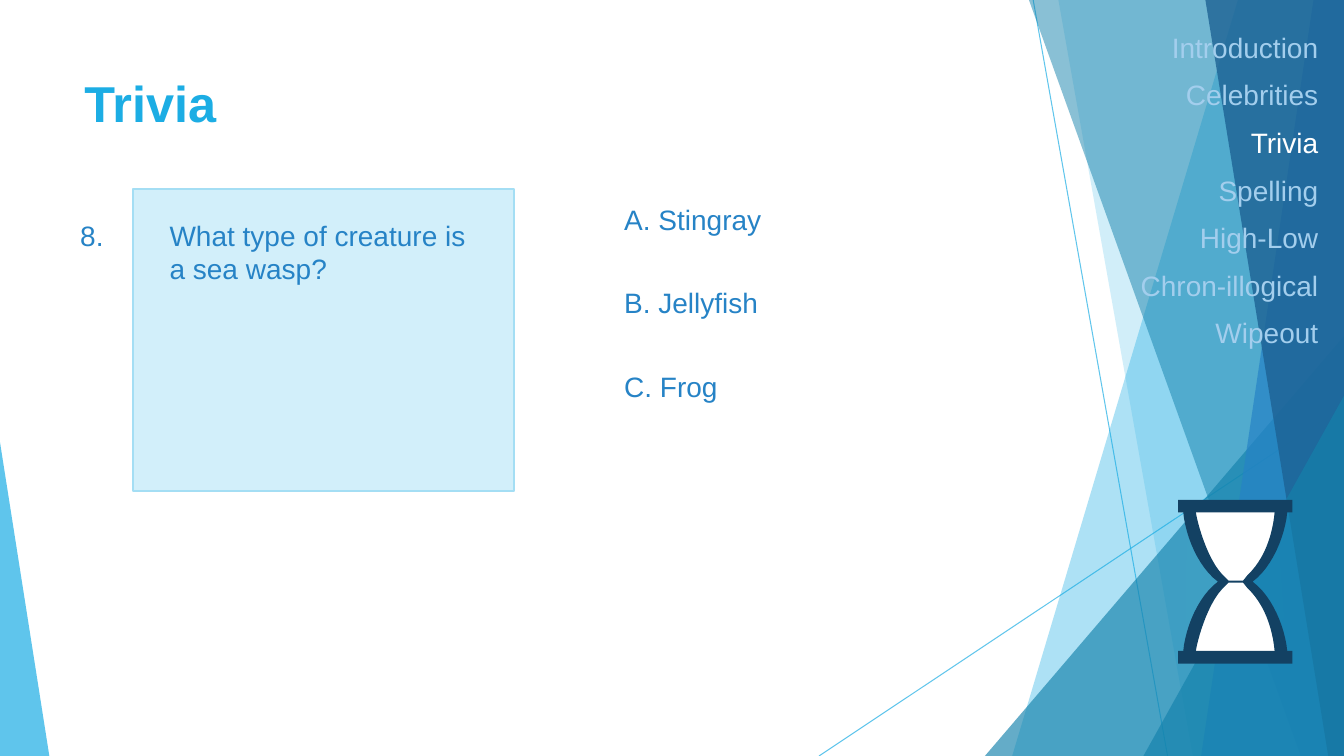
from dataclasses import dataclass

from lxml import etree
from pptx import Presentation
from pptx import util as u
from pptx.dml.color import RGBColor
from pptx.enum import shapes, text
from pptx.oxml import ns

PX = 9525  # EMU in one px
WIDTH, HEIGHT = 1280, 720
CURVE_STEPS = 12


@dataclass(frozen=True)
class Theme:
    font: str = "Arial"
    title_size: int = 36
    body_size: int = 20
    sky: str = "1CADE4"
    teal: str = "1482AC"
    blue: str = "2683C6"
    deep: str = "1D6294"
    navy: str = "134163"
    card: str = "D2EFFA"
    card_edge: str = "A4DEF4"
    muted: str = "A3CEED"
    white: str = "FFFFFF"
    waist_left: str = "3E9FC3"
    waist_right: str = "1A84B3"


THEME = Theme()


@dataclass(frozen=True)
class Ray:
    start: tuple[int, int]
    end: tuple[int, int]


@dataclass(frozen=True)
class Band:
    """A full-height facet between a slanted left edge and the slide's right edge."""
    top_x: int
    bottom_x: int
    color: str
    opacity: int


@dataclass(frozen=True)
class Wedge:
    """A right triangle standing on the slide's bottom edge."""
    left: int
    top: int
    width: int
    apex: float
    color: str
    opacity: int


@dataclass(frozen=True)
class Label:
    words: str
    left: int
    top: int
    width: int
    height: int = 42
    wrap: bool = True


RAYS = [Ray((984, 0), (1112, 720)), Ray((1280, 387), (780, 720))]
FACETS = [
    Band(1179, 964, THEME.sky, 36),
    Band(1008, 1136, THEME.sky, 20),
    Wedge(938, 320, 342, 1, THEME.teal, 66),
    Band(980, 1239, THEME.teal, 50),
    Band(1251, 1144, THEME.blue, 70),
    Band(1148, 1265, THEME.deep, 80),
    Wedge(1089, 377, 191, 1, THEME.teal, 66),
    Wedge(0, 421, 47, 0, THEME.sky, 70),
]
LABELS = [
    Label("What type of creature is a sea wasp?", 152, 203, 317, 74),
    Label("8.", 67, 203, 43, wrap=False),
    Label("A. Stingray", 585, 188, 321),
    Label("B. Jellyfish", 585, 267, 293),
    Label("C. Frog", 585, 347, 327),
]
ROUNDS = ["Introduction", "Celebrities", "Trivia", "Spelling", "High-Low",
          "Chron-illogical", "Wipeout"]
CURRENT_ROUND = "Trivia"

# Upper half of the hourglass: two numbers are a corner, six are a Bézier curve.
WAIST_Y = 554
FRAME_TOP = [(1160, 554), (1141, 540, 1129, 510, 1127, 488), (1122, 488), (1122, 476),
             (1231, 476), (1231, 488), (1226, 488), (1224, 510, 1212, 540, 1193, 554)]
BULB_TOP = [(1139, 488), (1140, 496, 1149, 531, 1164, 547), (1170, 553), (1184, 553),
            (1188, 548), (1204, 533, 1212, 510, 1214, 488)]
WAIST_LEFT = [(1134, 513), (1130, 518), (1129, 593), (1138, 593), (1165, 553)]
WAIST_RIGHT = [(1219, 594), (1223, 588), (1219, 529), (1215, 515), (1188, 554)]

Points = list[tuple[float, float]]


def rgb(color: str) -> RGBColor:
    return RGBColor.from_string(color)


def set_opacity(fill_parent, percent: int) -> None:
    color = fill_parent.find(".//" + ns.qn("a:srgbClr"))
    etree.SubElement(color, ns.qn("a:alpha")).set("val", str(percent * 1000))


def paint(shape, color: str, opacity: int = 100) -> None:
    shape.shadow.inherit = False
    shape.fill.solid()
    shape.fill.fore_color.rgb = rgb(color)
    shape.line.fill.background()
    if opacity < 100:
        set_opacity(shape._element.spPr, opacity)


def flatten(steps: list[tuple[int, ...]]) -> Points:
    """Turn corners and Bézier curves into a run of points."""
    points: Points = []
    for step in steps:
        if len(step) == 2:
            points.append(step)
            continue
        (x0, y0), (x1, y1, x2, y2, x3, y3) = points[-1], step
        for i in range(1, CURVE_STEPS + 1):
            t = i / CURVE_STEPS
            a, b, c, d = (1 - t) ** 3, 3 * t * (1 - t) ** 2, 3 * t * t * (1 - t), t ** 3
            points.append((a * x0 + b * x1 + c * x2 + d * x3,
                           a * y0 + b * y1 + c * y2 + d * y3))
    return points


def mirror(points: Points) -> Points:
    """Reflect points below the waist, in reverse order."""
    return [(x, 2 * WAIST_Y - y) for x, y in reversed(points)]


def add_outline(slide, contours: list[Points], color: str, opacity: int = 100) -> None:
    scaled = [[(x * PX, y * PX) for x, y in contour] for contour in contours]
    builder = slide.shapes.build_freeform(*scaled[0][0])
    for index, contour in enumerate(scaled):
        if index:
            builder.move_to(*contour[0])
        builder.add_line_segments(contour[1:], close=True)
    paint(builder.convert_to_shape(), color, opacity)


def add_preset(slide, kind, left: int, top: int, width: int, height: int):
    return slide.shapes.add_shape(kind, left * PX, top * PX, width * PX, height * PX)


def add_ray(slide, ray: Ray) -> None:
    ends = [value * PX for value in ray.start + ray.end]
    line = slide.shapes.add_connector(shapes.MSO_CONNECTOR.STRAIGHT, *ends)
    line.line.color.rgb = rgb(THEME.sky)
    line.line.width = u.Pt(0.75)
    properties = line._element.spPr
    set_opacity(properties, 70)
    etree.SubElement(properties, ns.qn("a:effectLst"))


def add_facet(slide, facet: Band | Wedge) -> None:
    if isinstance(facet, Band):
        corners = [(facet.top_x, 0), (WIDTH, 0), (WIDTH, HEIGHT), (facet.bottom_x, HEIGHT)]
        add_outline(slide, [corners], facet.color, facet.opacity)
    else:
        shape = add_preset(slide, shapes.MSO_SHAPE.ISOSCELES_TRIANGLE, facet.left,
                           facet.top, facet.width, HEIGHT - facet.top)
        shape.adjustments[0] = facet.apex
        paint(shape, facet.color, facet.opacity)


def style(paragraph, color: str, size: int = THEME.body_size, bold: bool = False) -> None:
    font = paragraph.font
    font.name, font.size, font.bold = THEME.font, u.Pt(size), bold
    font.color.rgb = rgb(color)


def add_label(slide, label: Label):
    box = slide.shapes.add_textbox(label.left * PX, label.top * PX,
                                   label.width * PX, label.height * PX)
    box.text_frame.word_wrap = label.wrap
    box.text_frame.text = label.words
    for paragraph in box.text_frame.paragraphs:
        style(paragraph, THEME.blue)
    return box


def add_rounds(slide) -> None:
    box = add_label(slide, Label("\n".join(ROUNDS), 1014, 24, 251, 434))
    for paragraph in box.text_frame.paragraphs:
        paragraph.alignment = text.PP_ALIGN.RIGHT
        paragraph.space_before = u.Pt(10)
        style(paragraph, THEME.white if paragraph.text == CURRENT_ROUND else THEME.muted)


def add_hourglass(slide) -> None:
    paint(add_preset(slide, shapes.MSO_SHAPE.RECTANGLE, 1139, 487, 76, 133), THEME.white)
    add_outline(slide, [WAIST_RIGHT], THEME.waist_right)
    add_outline(slide, [WAIST_LEFT], THEME.waist_left)
    frame, bulb = flatten(FRAME_TOP), flatten(BULB_TOP)
    add_outline(slide, [frame + mirror(frame), bulb, mirror(bulb)], THEME.navy)


def main() -> None:
    presentation = Presentation()
    presentation.slide_width, presentation.slide_height = WIDTH * PX, HEIGHT * PX
    slide = presentation.slides.add_slide(presentation.slide_layouts[6])
    for ray in RAYS:
        add_ray(slide, ray)
    for facet in FACETS:
        add_facet(slide, facet)
    card = add_preset(slide, shapes.MSO_SHAPE.RECTANGLE, 127, 180, 363, 288)
    paint(card, THEME.card)
    card.line.color.rgb = rgb(THEME.card_edge)
    card.line.width = u.Pt(1.5)
    title = add_label(slide, Label("Trivia", 71, 64, 902, 138))
    style(title.text_frame.paragraphs[0], THEME.sky, THEME.title_size, bold=True)
    for label in LABELS:
        add_label(slide, label)
    add_rounds(slide)
    add_hourglass(slide)
    presentation.save("out.pptx")


if __name__ == "__main__":
    main()
